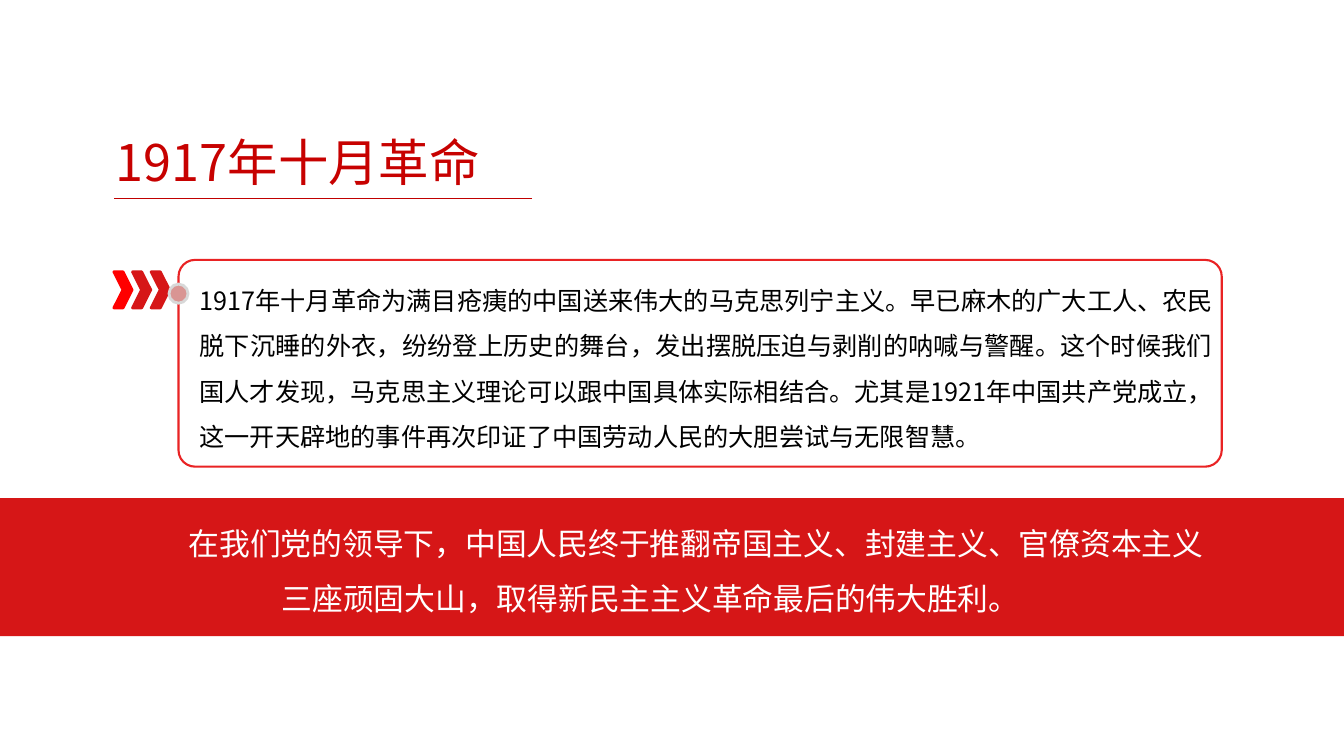
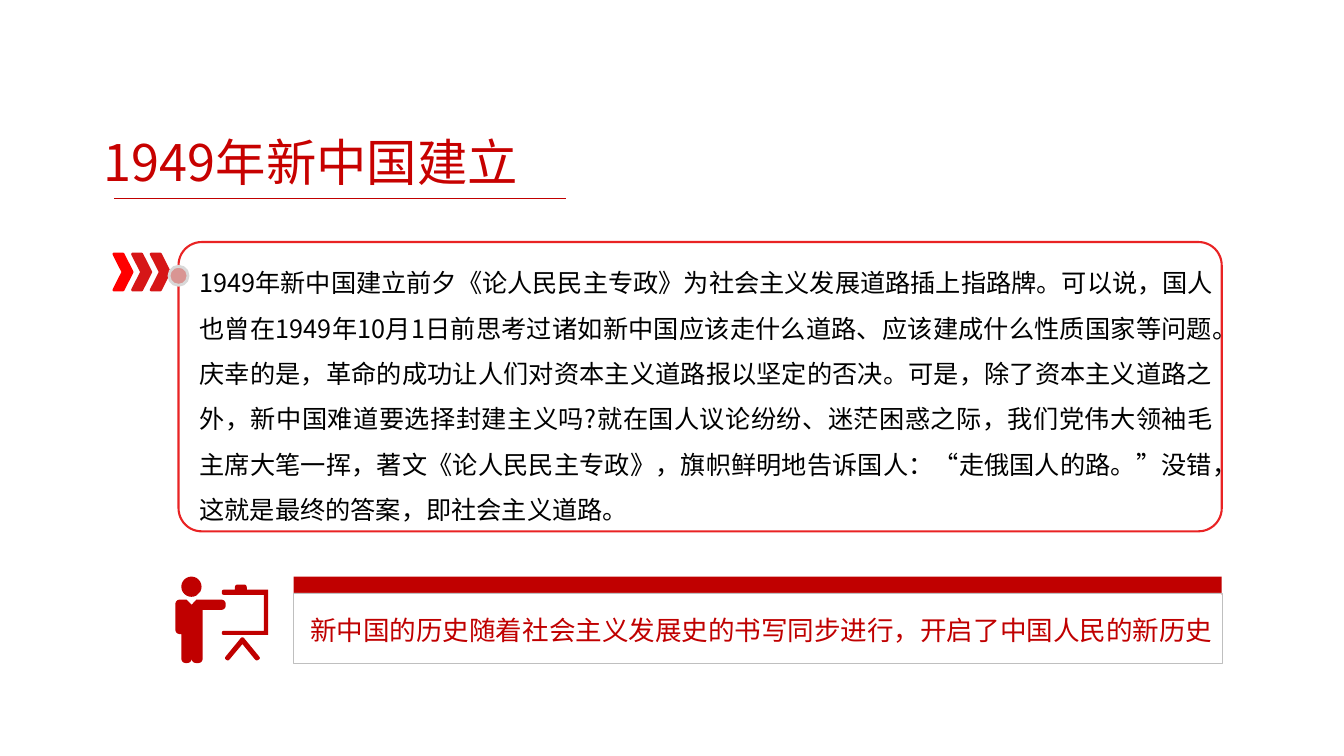
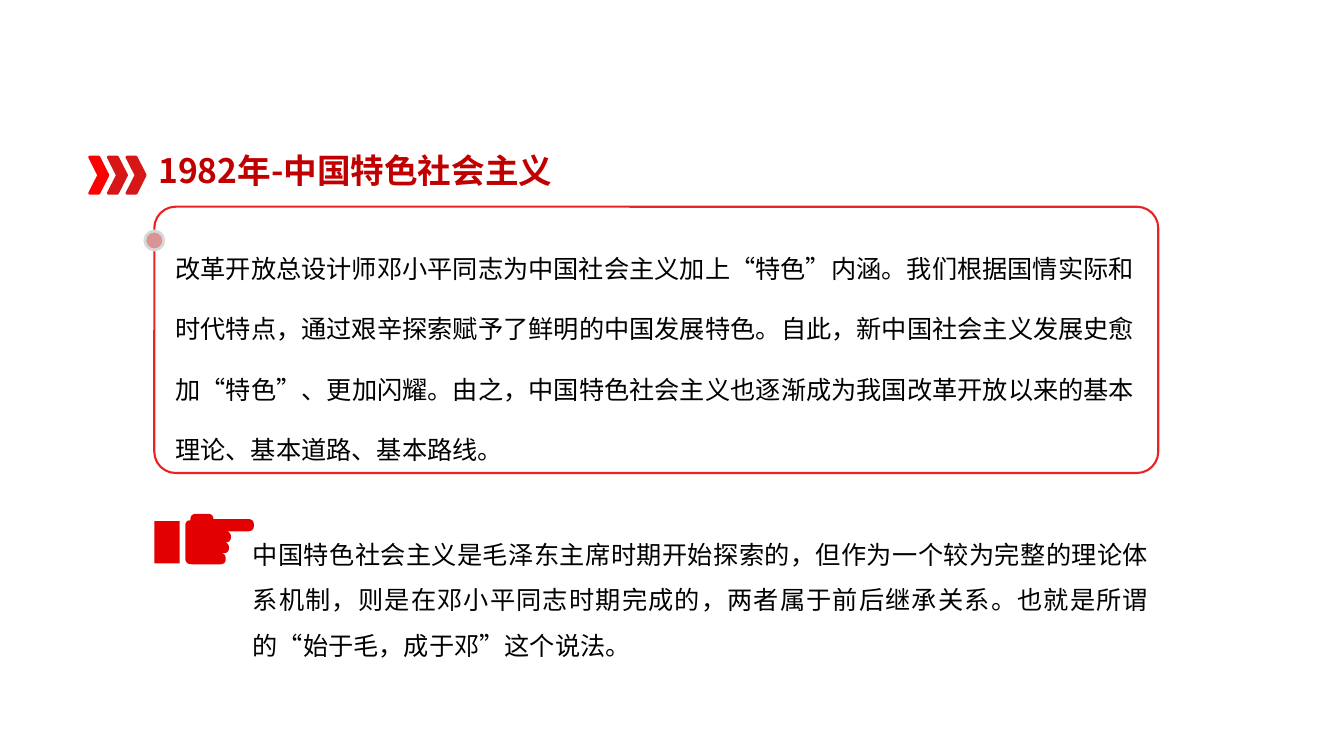
"""Build three slides on milestones in the history of socialism in China."""
from lxml.etree import SubElement
from pptx import Presentation
from pptx.dml.color import RGBColor
from pptx.enum.shapes import MSO_CONNECTOR, MSO_SHAPE
from pptx.enum.text import MSO_ANCHOR, PP_ALIGN
from pptx.oxml.ns import qn
from pptx.util import Cm, Pt

FONT = "Noto Sans CJK SC"
WHITE = RGBColor(0xFF, 0xFF, 0xFF)
BLACK = RGBColor(0x00, 0x00, 0x00)
TITLE_RED = RGBColor(0xC7, 0x01, 0x00)
DEEP_RED = RGBColor(0xC0, 0x00, 0x00)
BAND_RED = RGBColor(0xD6, 0x16, 0x17)
BRIGHT_RED = RGBColor(0xFF, 0x00, 0x00)
CARD_RED = RGBColor(0xE9, 0x23, 0x24)
HAND_RED = RGBColor(0xE2, 0x00, 0x00)
DOT_PINK = RGBColor(0xD9, 0x95, 0x93)
DOT_GREY = RGBColor(0xD8, 0xD8, 0xD8)
FRAME_GREY = RGBColor(0xBF, 0xBF, 0xBF)

WIDTH, HEIGHT = 33.87, 19.05
PLAIN_INSETS = (0.25, 0.13)
TITLE_INSETS = (0.33, 0.18)
RULE_LEFT, RULE_TOP = 2.87, 5.0
CHEVRON_STEP = 0.47
CURVE_STEPS = 6

SPEAKER_BODY = [
    (5.69, 15.11, 0.13), (4.95, 15.11, 0), (4.83, 15.24, 0), (4.7, 15.11, 0),
    (4.42, 15.11, 0.13), (4.42, 15.98, 0.13), (4.57, 15.98, 0),
    (4.57, 16.71, 0.13), (4.83, 16.71, 0.13), (4.83, 16.56, 0),
    (4.83, 16.71, 0.13), (5.11, 16.71, 0.13), (5.11, 15.37, 0),
    (5.69, 15.37, 0.13),
]
BOARD = [
    (5.59, 14.86, 0.06), (5.92, 14.86, 0), (5.92, 14.73, 0.08),
    (6.22, 14.73, 0.08), (6.22, 14.86, 0), (6.76, 14.86, 0),
    (6.76, 16.0, 0), (5.59, 16.0, 0.05), (5.59, 15.9, 0.05),
    (6.65, 15.9, 0), (6.65, 14.99, 0), (5.59, 14.99, 0.06),
]
EASEL_LEGS = [
    (6.11, 16.03, 0.08), (6.57, 16.59, 0.06), (6.46, 16.66, 0.06),
    (6.11, 16.23, 0), (5.75, 16.66, 0.06), (5.65, 16.59, 0.06),
]
HAND = [
    (4.67, 13.11, 0.14), (4.8, 13.11, 0), (4.8, 12.95, 0.14),
    (5.38, 12.95, 0.14), (5.38, 13.08, 0), (6.4, 13.08, 0.15),
    (6.4, 13.39, 0.15), (5.66, 13.39, 0), (5.82, 13.39, 0.14),
    (5.82, 13.67, 0.14), (5.61, 13.67, 0), (5.77, 13.67, 0.13),
    (5.77, 13.94, 0.13), (5.59, 13.94, 0), (5.69, 13.94, 0.14),
    (5.69, 14.22, 0.14), (4.67, 14.22, 0.16),
]


def toward(start, end, distance):
    dx, dy = end[0] - start[0], end[1] - start[1]
    share = distance / (dx * dx + dy * dy) ** 0.5
    return start[0] + dx * share, start[1] + dy * share


def rounded(corners):
    points = []
    for index, corner in enumerate(corners):
        x, y, radius = corner
        if not radius:
            points.append((x, y))
            continue
        entry = toward(corner, corners[index - 1], radius)
        leave = toward(corner, corners[(index + 1) % len(corners)], radius)
        for step in range(CURVE_STEPS + 1):
            t = step / CURVE_STEPS
            points.append(tuple(
                (1 - t) ** 2 * a + 2 * t * (1 - t) * b + t * t * c
                for a, b, c in zip(entry, (x, y), leave)))
    return points


class Deck:
    def __init__(self):
        self.deck = Presentation()
        self.deck.slide_width = Cm(WIDTH)
        self.deck.slide_height = Cm(HEIGHT)
        self.page = None

    def new_page(self):
        self.page = self.deck.slides.add_slide(self.deck.slide_layouts[6])

    def paint(self, shape, fill, line, weight):
        shape.shadow.inherit = False
        if fill is None:
            shape.fill.background()
        else:
            shape.fill.solid()
            shape.fill.fore_color.rgb = fill
        if line is None:
            shape.line.fill.background()
        else:
            shape.line.color.rgb = line
            shape.line.width = Pt(weight)

    def shape(self, kind, left, top, width, height,
              fill=None, line=None, weight=1):
        shape = self.page.shapes.add_shape(
            kind, Cm(left), Cm(top), Cm(width), Cm(height))
        self.paint(shape, fill, line, weight)
        return shape

    def outline(self, corners, fill):
        points = [(Cm(x), Cm(y)) for x, y in rounded(corners)]
        builder = self.page.shapes.build_freeform(*points[0])
        builder.add_line_segments(points[1:])
        self.paint(builder.convert_to_shape(), fill, None, 0)

    def text(self, words, left, top, width, height, size=18, color=BLACK,
             align=PP_ALIGN.JUSTIFY, spacing=1.5, bold=False,
             insets=PLAIN_INSETS, first_indent=0):
        box = self.page.shapes.add_textbox(
            Cm(left), Cm(top), Cm(width), Cm(height))
        frame = box.text_frame
        frame.word_wrap = True
        frame.vertical_anchor = MSO_ANCHOR.TOP
        frame.margin_left = frame.margin_right = Cm(insets[0])
        frame.margin_top = frame.margin_bottom = Cm(insets[1])
        para = frame.paragraphs[0]
        para.text = words
        para.alignment = align
        para.line_spacing = spacing
        if first_indent:
            properties = para._p.get_or_add_pPr()
            properties.set("marL", "0")
            properties.set("indent", str(Cm(first_indent)))
        font = para.font
        font.name = FONT
        font.size = Pt(size)
        font.bold = bold
        font.color.rgb = color
        SubElement(font._element, qn("a:ea"), typeface=FONT)

    def title(self, words, left, width):
        self.text(words, left, 3.12, width, 1.88, 36, TITLE_RED,
                  spacing=1, insets=TITLE_INSETS)
        rule = self.page.shapes.add_connector(
            MSO_CONNECTOR.STRAIGHT, Cm(left + width), Cm(RULE_TOP),
            Cm(RULE_LEFT), Cm(RULE_TOP))
        rule.line.color.rgb = DEEP_RED
        rule.line.width = Pt(1)
        SubElement(rule._element.spPr, qn("a:effectLst"))

    def chevrons(self, left, top):
        for index, color in enumerate((BRIGHT_RED, BAND_RED, BAND_RED)):
            self.shape(MSO_SHAPE.CHEVRON, left + index * CHEVRON_STEP, top,
                       0.46, 0.91, color, color, 2)

    def card(self, words, left, top, width, height, chevron_drop=0.3,
             text_drop=0.13, text_trim=0.25, spacing=1.5):
        self.chevrons(left - 1.63, top + chevron_drop)
        border = self.shape(MSO_SHAPE.ROUNDED_RECTANGLE, left, top, width,
                            height, line=CARD_RED, weight=1.5)
        border.adjustments[0] = 0.08
        self.shape(MSO_SHAPE.FLOWCHART_CONNECTOR, left - 0.24, top + 0.61,
                   0.48, 0.48, DOT_PINK, DOT_GREY, 2)
        self.text(words, left + 0.28, top + text_drop, width - text_trim,
                  height - text_drop, spacing=spacing)

    def speaker(self):
        self.shape(MSO_SHAPE.OVAL, 4.57, 14.53, 0.51, 0.51, DEEP_RED)
        for corners in (SPEAKER_BODY, BOARD, EASEL_LEGS):
            self.outline(corners, DEEP_RED)

    def pointing_hand(self):
        self.outline(HAND, HAND_RED)
        self.shape(MSO_SHAPE.RECTANGLE, 3.89, 13.13, 0.64, 1.07, HAND_RED)

    def save(self):
        self.deck.save("out.pptx")


def october_revolution(deck):
    deck.new_page()
    deck.title("1917年十月革命", 2.59, 10.82)
    deck.card(
        "1917年十月革命为满目疮痍的中国送来伟大的马克思列宁主义。早已麻木的"
        "广大工人、农民脱下沉睡的外衣，纷纷登上历史的舞台，发出摆脱压迫与"
        "剥削的呐喊与警醒。这个时候我们国人才发现，马克思主义理论可以跟中国"
        "具体实际相结合。尤其是1921年中国共产党成立，这一开天辟地的事件再次"
        "印证了中国劳动人民的大胆尝试与无限智慧。",
        4.5, 6.55, 26.29, 5.21)
    deck.shape(MSO_SHAPE.RECTANGLE, 0, 12.55, WIDTH, 3.48, BAND_RED)
    deck.text(
        "在我们党的领导下，中国人民终于推翻帝国主义、封建主义、官僚资本主义"
        "三座顽固大山，取得新民主主义革命最后的伟大胜利。",
        1.98, 12.62, 28.83, 3.07, 22, WHITE, PP_ALIGN.CENTER,
        first_indent=2.29)


def new_china(deck):
    deck.new_page()
    deck.title("1949年新中国建立", 2.29, 11.97)
    deck.card(
        "1949年新中国建立前夕《论人民民主专政》为社会主义发展道路插上指路牌。"
        "可以说，国人也曾在1949年10月1日前思考过诸如新中国应该走什么道路、"
        "应该建成什么性质国家等问题。庆幸的是，革命的成功让人们对资本主义道路"
        "报以坚定的否决。可是，除了资本主义道路之外，新中国难道要选择封建主义"
        "吗?就在国人议论纷纷、迷茫困惑之际，我们党伟大领袖毛主席大笔一挥，"
        "著文《论人民民主专政》，旗帜鲜明地告诉国人：“走俄国人的路。”没错，"
        "这就是最终的答案，即社会主义道路。",
        4.5, 6.1, 26.29, 7.29)
    deck.shape(MSO_SHAPE.RECTANGLE, 7.4, 14.53, 23.39, 0.46, DEEP_RED)
    deck.shape(MSO_SHAPE.RECTANGLE, 7.4, 14.94, 23.39, 1.78,
               WHITE, FRAME_GREY, 0.25)
    deck.text(
        "新中国的历史随着社会主义发展史的书写同步进行，开启了中国人民的新历史",
        7.52, 14.91, 23.67, 1.4, 19, DEEP_RED, PP_ALIGN.LEFT,
        insets=(0.3, 0.15))
    deck.speaker()


def chinese_socialism(deck):
    deck.new_page()
    deck.card(
        "改革开放总设计师邓小平同志为中国社会主义加上“特色”内涵。我们根据国情"
        "实际和时代特点，通过艰辛探索赋予了鲜明的中国发展特色。自此，新中国社会"
        "主义发展史愈加“特色”、更加闪耀。由之，中国特色社会主义也逐渐成为我国"
        "改革开放以来的基本理论、基本道路、基本路线。",
        3.89, 5.21, 25.3, 6.71, chevron_drop=-1.25, text_drop=0.28,
        text_trim=0.64, spacing=2)
    deck.text("1982年-中国特色社会主义", 3.66, 3.61, 14.38, 1.37, 24, DEEP_RED,
              PP_ALIGN.LEFT, 1, True, TITLE_INSETS)
    deck.pointing_hand()
    deck.text(
        "中国特色社会主义是毛泽东主席时期开始探索的，但作为一个较为完整的理论"
        "体系机制，则是在邓小平同志时期完成的，两者属于前后继承关系。也就是所谓"
        "的“始于毛，成于邓”这个说法。",
        6.12, 13.08, 23.06, 3.71)


def main():
    deck = Deck()
    october_revolution(deck)
    new_china(deck)
    chinese_socialism(deck)
    deck.save()


if __name__ == "__main__":
    main()
